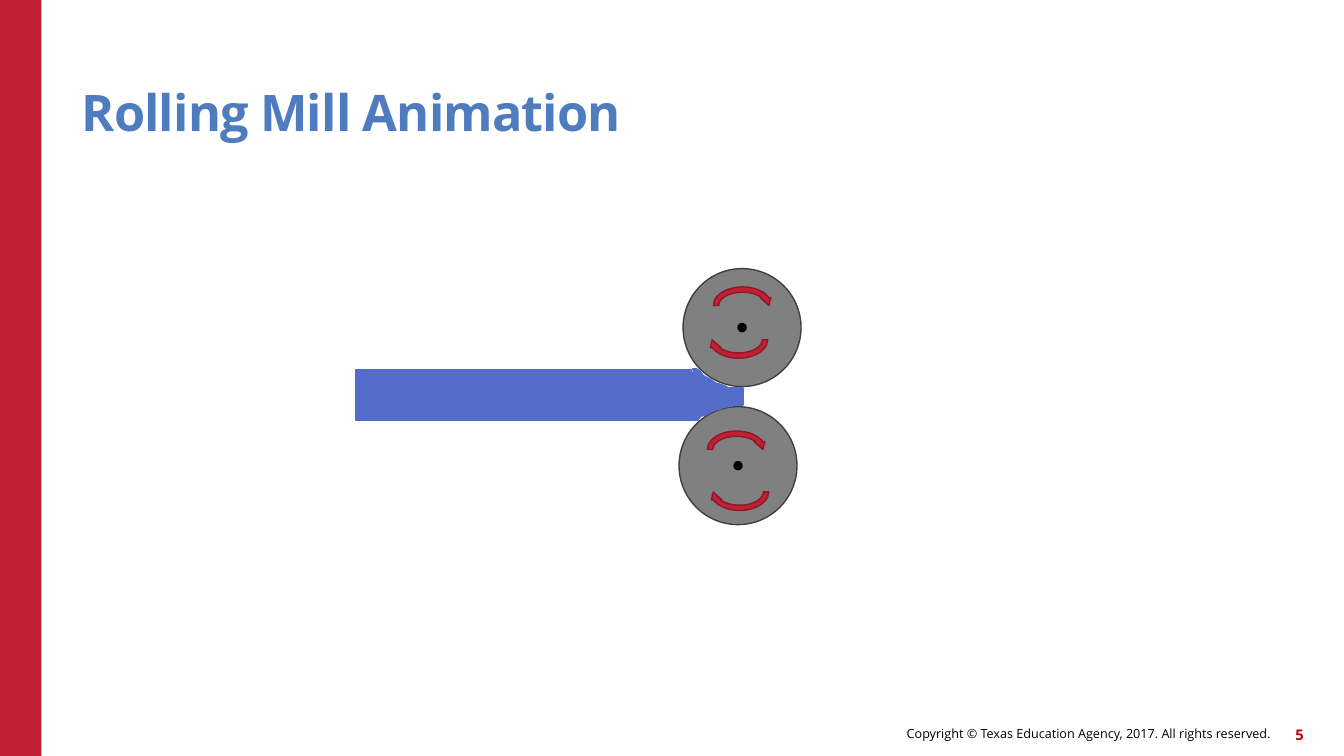
from pptx import Presentation
from pptx.dml.color import RGBColor
from pptx.enum.shapes import MSO_SHAPE
from pptx.enum.text import MSO_ANCHOR, PP_ALIGN
from pptx.util import Inches, Pt

RECTANGLE, OVAL = MSO_SHAPE.RECTANGLE, MSO_SHAPE.OVAL
CIRCULAR_ARROW = MSO_SHAPE.CIRCULAR_ARROW
LEFT, RIGHT = PP_ALIGN.LEFT, PP_ALIGN.RIGHT
MIDDLE, BOTTOM = MSO_ANCHOR.MIDDLE, MSO_ANCHOR.BOTTOM

RED = RGBColor(0xC0, 0x20, 0x33)
DARK_RED = RGBColor(0x8E, 0x18, 0x26)
NUMBER_RED = RGBColor(0xC0, 0x00, 0x00)
TITLE_BLUE = RGBColor(0x4E, 0x7C, 0xBE)
METAL_BLUE = RGBColor(0x54, 0x6D, 0xCB)
GRAY = RGBColor(0x80, 0x80, 0x80)
DARK_GRAY = RGBColor(0x40, 0x40, 0x40)
BLACK = RGBColor(0x00, 0x00, 0x00)

# Content: text, place, alignment, anchor, font, letter spacing, line spacing
TEXTS = [
    ("Copyright © Texas Education Agency, 2017. All rights reserved.",
     (6.14, 7.12, 6.46, 0.32), RIGHT, MIDDLE,
     {"size": Pt(9), "bold": False}, BLACK, 0, 1.0),
    ("5", (12.51, 7.13, 0.42, 0.32), RIGHT, MIDDLE,
     {"size": Pt(10.5), "bold": True}, NUMBER_RED, 0, 1.0),
    ("Rolling Mill Animation", (0.81, 0.45, 11, 0.96), LEFT, BOTTOM,
     {"size": Pt(36), "bold": True}, TITLE_BLUE, -60, 0.9),
]

# Rollers: centre of each; arrows: left, top, rotation
ROLLER_SIZE, AXLE_SIZE = 1.17, 0.08
ROLLER_CENTERS = [(7.36, 3.25), (7.32, 4.62)]
ARROW_SIZE = (0.63, 0.42)
ARROWS = [(6.99, 4.25, 0), (7.05, 2.82, 0), (7.01, 3.16, 180), (7.02, 4.67, 180)]

# Metal: slab and thinned strip in inches, wedge outlines in hundredths
SLAB_AND_STRIP = [(5.11, 3.67, 1.75, 0.5), (4.33, 3.85, 3.04, 0.17)]
SLAB_TAIL = (3.53, 3.67, 1.58, 0.5)
WEDGES = [
    [(687, 366), (691, 366), (694, 368), (698, 373), (704, 376), (710, 380),
     (717, 382), (723, 385), (700, 385), (686, 385), (686, 372), (688, 368)],
    [(687, 417), (692, 417), (695, 413), (699, 412), (705, 409), (708, 407),
     (714, 406), (718, 404), (726, 403), (687, 403)],
]

deck = Presentation()
deck.slide_width, deck.slide_height = Inches(13.33), Inches(7.5)
page = deck.slides.add_slide(deck.slide_layouts[6])


def paint(shape, fill, line=None):
    shape.shadow.inherit = False
    shape.fill.solid()
    shape.fill.fore_color.rgb = fill
    if line is None:
        shape.line.fill.background()
    else:
        shape.line.color.rgb = line
        shape.line.width = Pt(1)


def add_part(kind, place, fill, line=None, rotation=0):
    shape = page.shapes.add_shape(kind, *map(Inches, place))
    shape.rotation = rotation
    paint(shape, fill, line)


def add_disc(center, size, fill, line):
    x, y = center
    add_part(OVAL, (x - size / 2, y - size / 2, size, size), fill, line)


def add_text(text, place, align, anchor, font, color, tracking, spacing):
    box = page.shapes.add_textbox(*map(Inches, place))
    frame = box.text_frame
    layout = {"word_wrap": True, "vertical_anchor": anchor, "margin_left": 0,
              "margin_right": 0, "margin_top": 0, "margin_bottom": 0}
    for name, value in layout.items():
        setattr(frame, name, value)
    para = frame.paragraphs[0]
    para.alignment, para.line_spacing = align, spacing
    span = para.add_run()
    span.text = text
    for name, value in {"name": "Open Sans", **font}.items():
        setattr(span.font, name, value)
    span.font.color.rgb = color
    if tracking:
        span.font._element.set("spc", str(tracking))


# Side band and texts
add_part(RECTANGLE, (0, 0, 0.41, 7.5), RED)
for entry in TEXTS:
    add_text(*entry)

# Rollers with axles
for center in ROLLER_CENTERS:
    add_disc(center, ROLLER_SIZE, GRAY, DARK_GRAY)
    add_disc(center, AXLE_SIZE, BLACK, BLACK)

# Metal passing between the rollers
for place in SLAB_AND_STRIP:
    add_part(RECTANGLE, place, METAL_BLUE, METAL_BLUE)
for start, *others in WEDGES:
    outline = page.shapes.build_freeform(*start, scale=Inches(0.01))
    outline.add_line_segments(others, close=True)
    paint(outline.convert_to_shape(), METAL_BLUE, METAL_BLUE)
add_part(RECTANGLE, SLAB_TAIL, METAL_BLUE, METAL_BLUE)

# Turning arrows
for left, top, rotation in ARROWS:
    add_part(CIRCULAR_ARROW, (left, top, *ARROW_SIZE), RED, DARK_RED, rotation)

deck.save("out.pptx")
